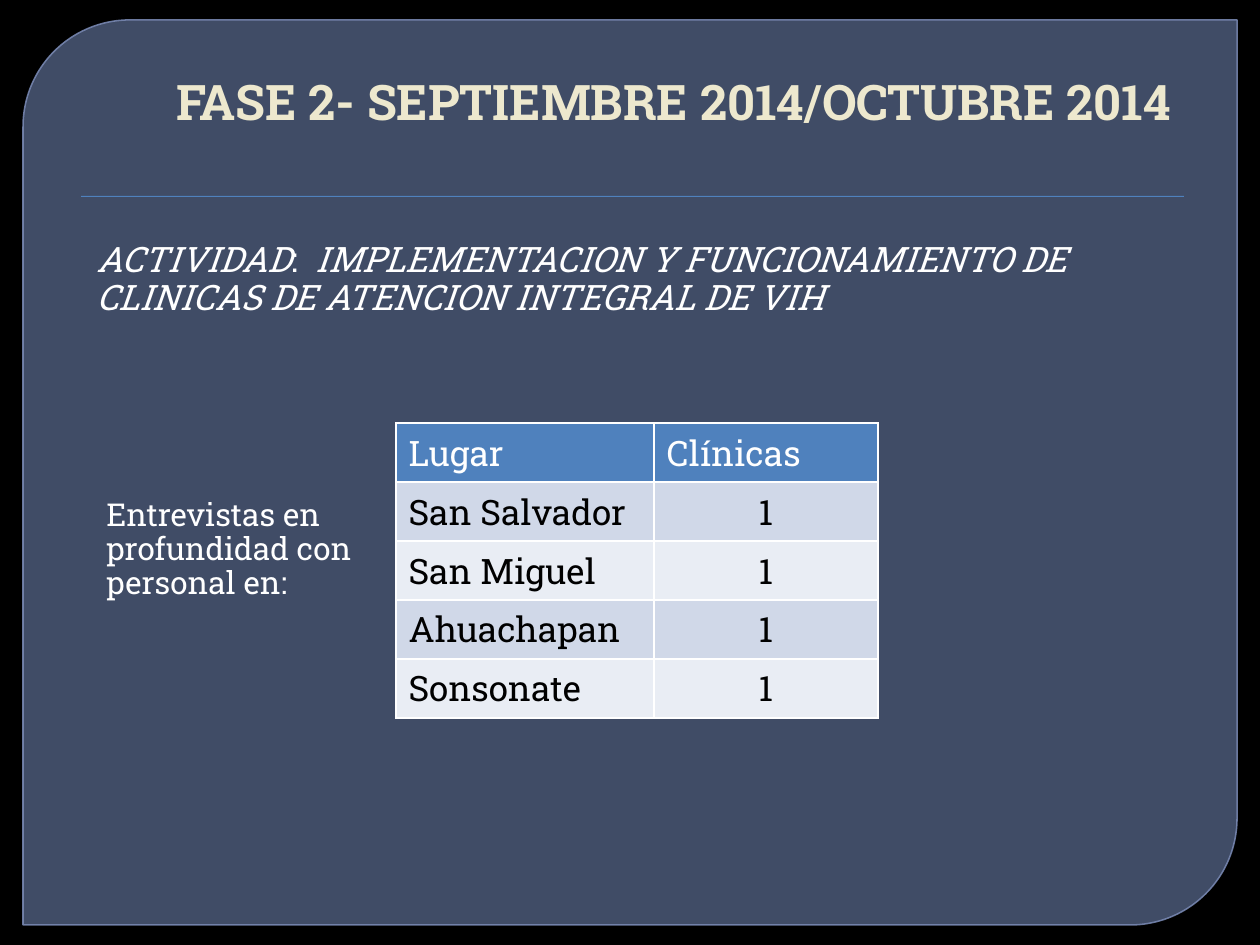
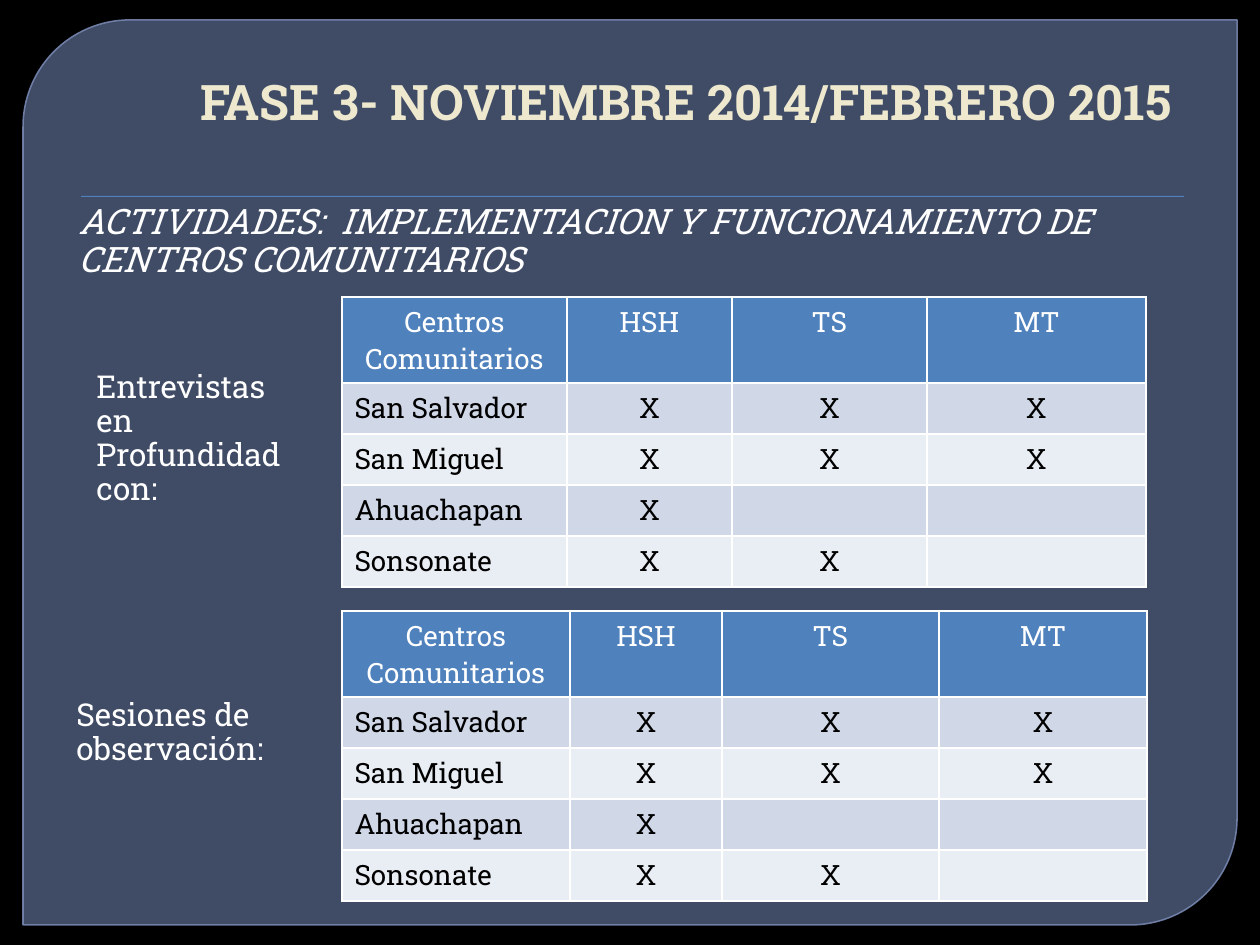
from lxml import etree
from pptx import Presentation
from pptx.dml.color import RGBColor
from pptx.enum.shapes import MSO_SHAPE
from pptx.enum.text import MSO_ANCHOR, MSO_AUTO_SIZE, PP_ALIGN
from pptx.oxml.ns import qn
from pptx.util import Pt

PX = 914400 / 126
FONT = "Roboto Slab"
TITLE_ONLY = 5
PANEL_SHAPE = MSO_SHAPE.ROUND_2_DIAG_RECTANGLE
RECTANGLE = MSO_SHAPE.RECTANGLE
LEFT, CENTER, RIGHT = PP_ALIGN.LEFT, PP_ALIGN.CENTER, PP_ALIGN.RIGHT

COLORS = {
    "background": "000000",
    "panel": "63759D",
    "panel_line": "7989B3",
    "accent": "4F81BD",
    "title": "EDE8CE",
    "light": "FFFFFF",
    "dark": "000000",
    "band_odd": "D0D8E8",
    "band_even": "E9EDF4",
}

CENTER_ROWS = [
    ["Centros Comunitarios", "HSH", "TS", "MT"],
    ["San Salvador", "X", "X", "X"],
    ["San Miguel", "X", "X", "X"],
    ["Ahuachapan", "X", "", ""],
    ["Sonsonate", "X", "X", ""],
]
CLINIC_ROWS = [
    ["Lugar", "Clínicas"],
    ["San Salvador", "1"],
    ["San Miguel", "1"],
    ["Ahuachapan", "1"],
    ["Sonsonate", "1"],
]


def px(length):
    return round(length * PX)


def color(name):
    return RGBColor.from_string(COLORS[name])


def style_span(span, size, color_name, bold=False, italic=False):
    font = span.font
    font.name, font.size = FONT, Pt(size)
    font.bold, font.italic = bold, italic
    font.color.rgb = color(color_name)


def set_alpha(fill_parent, percent):
    """Make the solid fill inside an XML element partly transparent."""
    solid = fill_parent.find(qn("a:solidFill"))
    etree.SubElement(solid[0], qn("a:alpha"), val=str(percent * 1000))


def add_panel(page):
    """Draw the rounded panel and its rule behind the title."""
    panel = page.shapes.add_shape(PANEL_SHAPE, px(23), px(20), px(1214), px(905))
    panel.adjustments[0], panel.adjustments[1] = 0.118, 0
    panel.fill.solid()
    panel.fill.fore_color.rgb = color("panel")
    panel.line.color.rgb = color("panel_line")
    panel.line.width = Pt(0.87)
    properties = panel._element.spPr
    set_alpha(properties, 65)
    set_alpha(properties.find(qn("a:ln")), 88)

    rule = page.shapes.add_shape(RECTANGLE, px(81), px(196), px(1103), px(1))
    rule.fill.solid()
    rule.fill.fore_color.rgb = color("accent")
    rule.line.fill.background()

    for position, shape in enumerate((panel, rule), start=2):
        shape.shadow.inherit = False
        page.shapes._spTree.insert(position, shape._element)


def format_title(page, text):
    title = page.shapes.title
    title.left, title.top = px(63), px(35)
    title.width, title.height = px(1134), px(158)
    frame = title.text_frame
    frame.text = text
    frame.auto_size = MSO_AUTO_SIZE.NONE
    frame.vertical_anchor = MSO_ANCHOR.BOTTOM
    frame.margin_right, frame.margin_bottom = px(26), px(63)
    para = frame.paragraphs[0]
    para.alignment = RIGHT
    style_span(para.runs[0], 28, "title", bold=True)


def add_page(deck, title):
    page = deck.slides.add_slide(deck.slide_layouts[TITLE_ONLY])
    add_panel(page)
    format_title(page, title)
    return page


def add_text(page, box, lines, size):
    """Add a text box; each line is a list of (text, italic) spans."""
    shape = page.shapes.add_textbox(*map(px, box))
    frame = shape.text_frame
    frame.word_wrap = True
    for index, spans in enumerate(lines):
        para = frame.add_paragraph() if index else frame.paragraphs[0]
        para.line_spacing = 0.9
        for text, italic in spans:
            span = para.add_run()
            span.text = text
            style_span(span, size, "light", italic=italic)


def add_activity(page, left, top, spans):
    add_text(page, (left, top, 1130, 96), [spans], 20)


def add_label(page, box, *lines):
    add_text(page, box, [[(line, False)] for line in lines], 18)


def add_borders(cell):
    properties = cell._tc.get_or_add_tcPr()
    for position, side in enumerate(("lnL", "lnR", "lnT", "lnB")):
        line = etree.Element(qn("a:" + side), w=str(Pt(1)))
        solid = etree.SubElement(line, qn("a:solidFill"))
        etree.SubElement(solid, qn("a:srgbClr"), val=COLORS["light"])
        properties.insert(position, line)


def fill_cell(cell, text, size, fill_name, color_name, alignment):
    cell.fill.solid()
    cell.fill.fore_color.rgb = color(fill_name)
    add_borders(cell)
    cell.text_frame.text = text
    para = cell.text_frame.paragraphs[0]
    para.alignment = alignment
    for span in para.runs:
        style_span(span, size, color_name)
    if not text:
        end = etree.SubElement(para._p, qn("a:endParaRPr"), sz=str(size * 100))
        etree.SubElement(end, qn("a:latin"), typeface=FONT)


def add_place_table(page, left, top, widths, heights, rows, size, header_alignment):
    frame = page.shapes.add_table(
        len(rows), len(widths), px(left), px(top), px(sum(widths)), px(sum(heights)))
    table = frame.table
    for column, width in zip(table.columns, widths):
        column.width = px(width)
    for row_index, (row, height) in enumerate(zip(rows, heights)):
        table.rows[row_index].height = px(height)
        band = "band_odd" if row_index % 2 else "band_even"
        for column_index, text in enumerate(row):
            cell = table.cell(row_index, column_index)
            if row_index == 0:
                fill_cell(cell, text, size, "accent", "light", header_alignment)
            else:
                alignment = CENTER if column_index else LEFT
                fill_cell(cell, text, size, band, "dark", alignment)


def build_clinics(deck):
    page = add_page(deck, "FASE 2- SEPTIEMBRE 2014/OCTUBRE 2014")
    add_activity(page, 84, 236, [
        ("ACTIVIDAD", True),
        (":  ", False),
        ("IMPLEMENTACION Y FUNCIONAMIENTO DE CLINICAS DE ATENCION INTEGRAL DE VIH", True),
    ])
    add_place_table(page, 396, 423, [258, 224], [59] * 5, CLINIC_ROWS, 20, LEFT)
    add_label(page, (94, 493, 277, 127), "Entrevistas en profundidad con personal en:")


def build_community_centers(deck):
    page = add_page(deck, "FASE 3- NOVIEMBRE 2014/FEBRERO 2015")
    add_activity(page, 66, 198, [
        ("ACTIVIDADES:  IMPLEMENTACION Y FUNCIONAMIENTO DE CENTROS COMUNITARIOS", True),
    ])
    heights = [86] + [51] * 4
    for top, widths in ((297, [225, 165, 195, 219]), (611, [228, 152, 217, 208])):
        add_place_table(page, 342, top, widths, heights, CENTER_ROWS, 16, CENTER)
    add_label(page, (84, 365, 228, 127), "Entrevistas en", "Profundidad con:")
    add_label(page, (64, 693, 228, 89), "Sesiones de observación:")


def main():
    deck = Presentation()
    deck.slide_width, deck.slide_height = px(1260), px(945)
    background = deck.slide_master.background.fill
    background.solid()
    background.fore_color.rgb = color("background")
    build_clinics(deck)
    build_community_centers(deck)
    deck.save("out.pptx")


if __name__ == "__main__":
    main()
